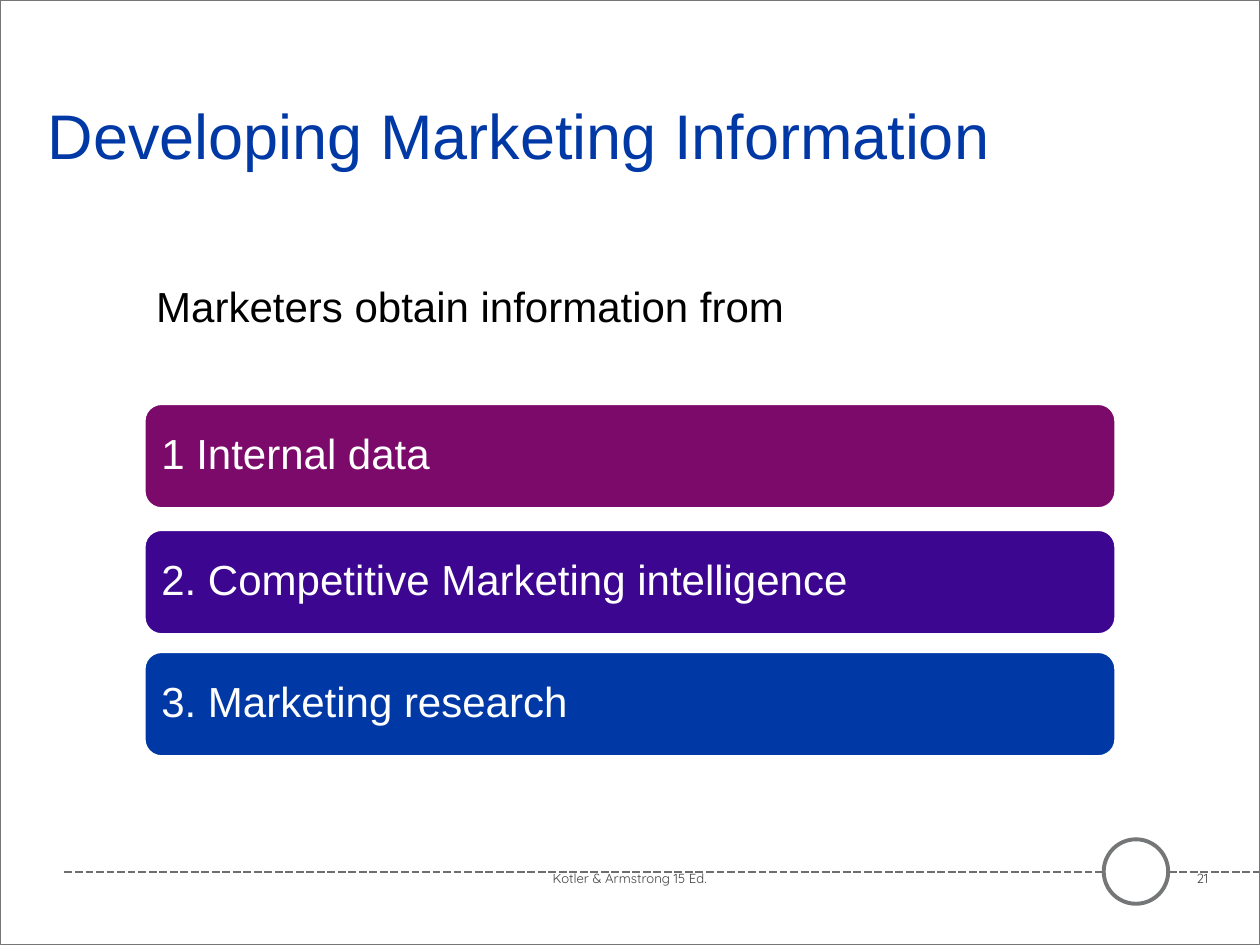
from dataclasses import dataclass

from lxml import etree
from pptx import Presentation
from pptx.dml.color import RGBColor
from pptx.enum import dml, shapes, text
from pptx.oxml import ns
from pptx.util import Cm, Pt


@dataclass(frozen=True)
class Theme:
    blue: str = "0039A6"
    plum: str = "7B0A6B"
    violet: str = "3D0690"
    white: str = "FFFFFF"
    black: str = "000000"
    gray: str = "747678"
    rule: str = "6D6E71"
    note: str = "404040"
    face: str = "Arial"
    foot: str = "Quicksand"
    head: float = 36
    body: float = 24
    small: float = 7.5


T = Theme()
KIND = shapes.MSO_SHAPE
ALIGN = text.PP_ALIGN
ANCHOR = text.MSO_ANCHOR


def rgb(code):
    return RGBColor.from_string(code)


def write(shape, words, size=T.body, color=T.black, face=T.face,
          align=ALIGN.LEFT, anchor=ANCHOR.TOP, lead=None):
    frame = shape.text_frame
    frame.word_wrap = True
    frame.vertical_anchor = anchor
    para = frame.paragraphs[0]
    para.text = words
    para.alignment = align
    para.line_spacing = lead
    para.font.size = Pt(size)
    para.font.name = face
    para.font.color.rgb = rgb(color)
    return frame


def label(slide, box, words, **form):
    return write(slide.shapes.add_textbox(*map(Cm, box)), words, **form)


def block(slide, kind, box, fill, line, width):
    shape = slide.shapes.add_shape(kind, *map(Cm, box))
    shape.shadow.inherit = False
    if fill:
        shape.fill.solid()
        shape.fill.fore_color.rgb = rgb(fill)
    else:
        shape.fill.background()
    shape.line.color.rgb = rgb(line)
    shape.line.width = Pt(width)
    return shape


def dash(slide, left, right, top):
    line = slide.shapes.add_connector(
        shapes.MSO_CONNECTOR.STRAIGHT, Cm(left), Cm(top), Cm(right), Cm(top))
    line.line.color.rgb = rgb(T.rule)
    line.line.width = Pt(1.5)
    line.line.dash_style = dml.MSO_LINE.SQUARE_DOT
    props = line.element.find(ns.qn("p:spPr"))
    etree.SubElement(props, ns.qn("a:effectLst"))


def bar(slide, top, fill, words):
    shape = block(slide, KIND.ROUNDED_RECTANGLE, (2.9, top, 19.6, 2.13),
                  fill, T.white, 2)
    frame = write(shape, words, color=T.white, anchor=ANCHOR.MIDDLE, lead=0.9)
    frame.margin_left = frame.margin_right = Cm(0.25)


def main():
    deck = Presentation()
    deck.slide_width, deck.slide_height = Cm(25.4), Cm(19.05)
    slide = deck.slides.add_slide(deck.slide_layouts[6])

    dash(slide, 1.3, 25.4, 17.58)
    block(slide, KIND.OVAL, (22.25, 16.92, 1.3, 1.3), T.white, T.gray, 2.25)
    block(slide, KIND.RECTANGLE, (0, 0, 25.4, 19.05), None, T.gray, 0.5)

    label(slide, (0.71, 1.12, 23.9, 3.18), "Developing Marketing Information",
          size=T.head, color=T.blue, anchor=ANCHOR.MIDDLE)
    label(slide, (2.9, 5.54, 20.6, 1.8), "Marketers obtain information from")

    bars = (
        (8.13, T.plum, "1 Internal data"),
        (10.67, T.violet, "2. Competitive Marketing intelligence"),
        (13.13, T.blue, "3. Marketing research"),
    )
    for top, fill, words in bars:
        bar(slide, top, fill, words)

    foot = dict(size=T.small, color=T.note, face=T.foot, anchor=ANCHOR.BOTTOM)
    label(slide, (7.26, 17.27, 10.87, 0.71), "Kotler & Armstrong 15 Ed.",
          align=ALIGN.CENTER, **foot)
    label(slide, (21.56, 17.27, 3.05, 0.71), "21", align=ALIGN.RIGHT, **foot)

    deck.save("out.pptx")


if __name__ == "__main__":
    main()
